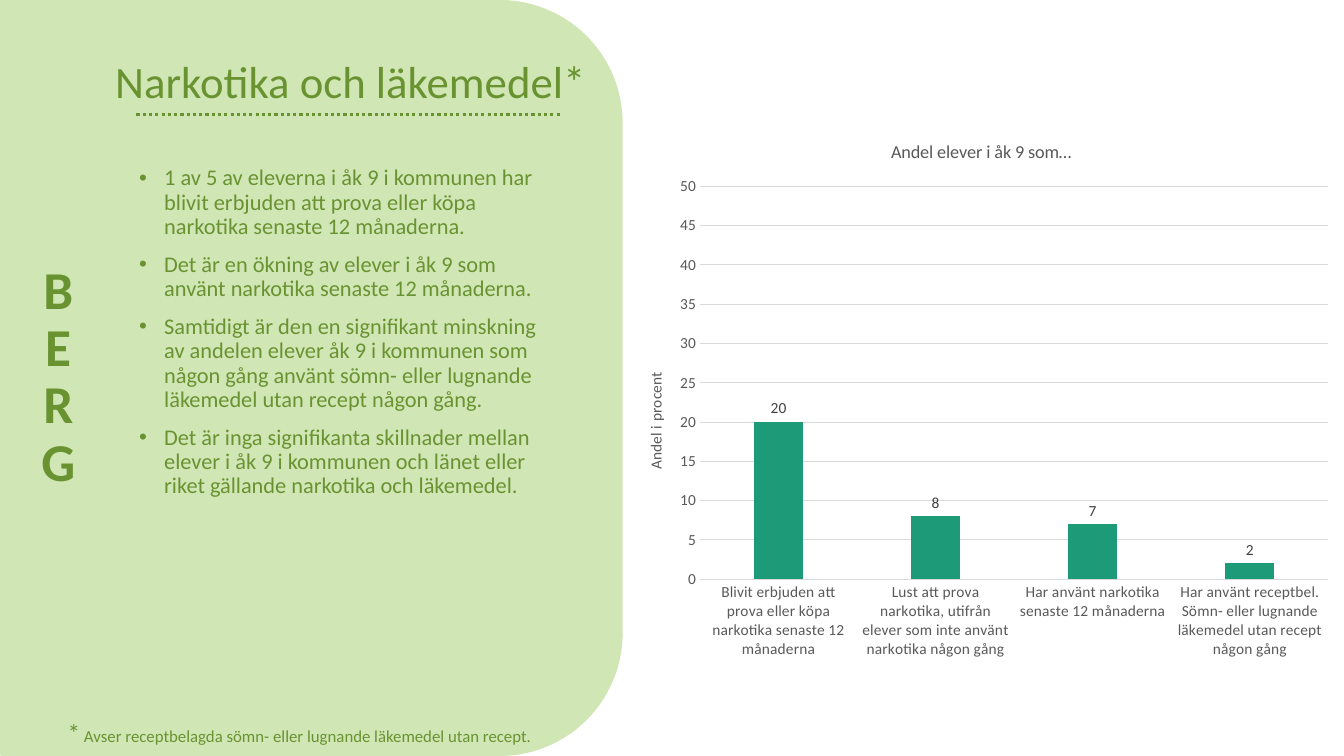
from lxml.etree import SubElement
from pptx import Presentation
from pptx.chart.data import CategoryChartData
from pptx.dml.color import RGBColor
from pptx.enum.chart import XL_CHART_TYPE as ChartType, XL_LABEL_POSITION as LabelPosition
from pptx.enum.chart import XL_TICK_MARK as TickMark
from pptx.enum.dml import MSO_LINE as Dash
from pptx.enum.shapes import MSO_CONNECTOR as Connector, MSO_SHAPE as Shape
from pptx.enum.text import MSO_ANCHOR as Anchor, PP_ALIGN as Align
from pptx.oxml.ns import qn
from pptx.util import Pt

PX = 9525  # EMU per px, 96 px to the inch
WIDTH, HEIGHT = 1280, 720
FONT = "Calibri"
PALE_GREEN = RGBColor(0xD1, 0xE6, 0xB5)
LEAF_GREEN = RGBColor(0x69, 0x93, 0x31)
BAR_GREEN = RGBColor(0x1D, 0x9A, 0x78)
GRID_GREY = RGBColor(0xD9, 0xD9, 0xD9)
AXIS_GREY = RGBColor(0x59, 0x59, 0x59)
LABEL_GREY = RGBColor(0x40, 0x40, 0x40)

FINDINGS = [
    "1 av 5 av eleverna i åk 9 i kommunen har blivit erbjuden att prova eller köpa "
    "narkotika senaste 12 månaderna.",
    "Det är en ökning av elever i åk 9 som använt narkotika senaste 12 månaderna.",
    "Samtidigt är den en signifikant minskning av andelen elever åk 9 i kommunen som "
    "någon gång använt sömn- eller lugnande läkemedel utan recept någon gång.",
    "Det är inga signifikanta skillnader mellan elever i åk 9 i kommunen och länet eller "
    "riket gällande narkotika och läkemedel.",
]
SHARES = {
    "Blivit erbjuden att prova eller köpa narkotika senaste 12 månaderna": 20,
    "Lust att prova narkotika, utifrån elever som inte använt narkotika någon gång": 8,
    "Har använt narkotika senaste 12 månaderna": 7,
    "Har använt receptbel. Sömn- eller lugnande läkemedel utan recept någon gång": 2,
}


def emu(*lengths):
    return [length * PX for length in lengths]


def set_font(font, size, color, bold=False):
    font.name, font.size, font.bold = FONT, Pt(size), bold
    font.color.rgb = color


def add_text(slide, box, paragraphs, align=Align.LEFT, anchor=Anchor.TOP, spacing=None,
             before=0, bold=False, bullet=False, vertical=None):
    """Each paragraph is a list of (text, size) runs."""
    shape = slide.shapes.add_textbox(*emu(*box))
    frame = shape.text_frame
    frame.word_wrap, frame.vertical_anchor = True, anchor
    if vertical:
        frame._txBody.bodyPr.set("vert", vertical)
    for index, runs in enumerate(paragraphs):
        paragraph = frame.paragraphs[0] if index == 0 else frame.add_paragraph()
        paragraph.alignment, paragraph.line_spacing = align, spacing
        paragraph.space_before = Pt(before)
        if bullet:
            properties = paragraph._p.get_or_add_pPr()
            properties.set("marL", str(24 * PX))
            properties.set("indent", str(-24 * PX))
            SubElement(properties, qn("a:buFont")).set("typeface", "Arial")
            SubElement(properties, qn("a:buChar")).set("char", "•")
        for text, size in runs:
            run = paragraph.add_run()
            run.text = text
            set_font(run.font, size, LEAF_GREEN, bold)
    return shape


def add_panel(slide, left, top, width, height):
    # Green panel, its left corners beyond the slide edge
    bleed = 109
    panel = slide.shapes.add_shape(
        Shape.ROUNDED_RECTANGLE, *emu(left - bleed, top, width + bleed, height))
    panel.shadow.inherit = False
    panel.fill.solid()
    panel.fill.fore_color.rgb = PALE_GREEN
    panel.line.fill.background()

    # Heading and dotted rule
    add_text(slide, (left + 55, top + 6, 558, 148), [[("Narkotika och läkemedel*", 32)]],
             align=Align.CENTER, anchor=Anchor.MIDDLE, spacing=0.9)
    rule = slide.shapes.add_connector(
        Connector.STRAIGHT, *emu(left + 130, top + 109, left + 533, top + 109))
    rule.line.color.rgb, rule.line.width = LEAF_GREEN, Pt(2.25)
    rule.line.dash_style = Dash.ROUND_DOT
    SubElement(rule._element.spPr, qn("a:effectLst"))

    # Findings, municipality name and footnote
    add_text(slide, (left + 123, top + 154, 410, 467), [[(text, 16)] for text in FINDINGS],
             spacing=0.9, before=10, bullet=True)
    add_text(slide, (left + 5, top + 6, 101, 708), [[("BERG", 38)]], align=Align.CENTER,
             anchor=Anchor.BOTTOM, spacing=0.9, bold=True, vertical="wordArtVert")
    note = " Avser receptbelagda sömn- eller lugnande läkemedel utan recept."
    add_text(slide, (left + 55, top + 678, 900, 38), [[("*", 18), (note, 12)]])


def set_layout(element, **fractions):
    """Fix the place of a chart part, in fractions of the chart."""
    layout = element.find(qn("c:layout"))
    if layout is None:
        layout = SubElement(element, qn("c:layout"))
        element.insert(0, layout)
    manual = SubElement(layout, qn("c:manualLayout"))
    if "w" in fractions:
        SubElement(manual, qn("c:layoutTarget")).set("val", "inner")
    for name in ("x", "y"):
        SubElement(manual, qn(f"c:{name}Mode")).set("val", "edge")
    for name, value in fractions.items():
        SubElement(manual, qn(f"c:{name}")).set("val", str(value))


def add_chart_title(owner, text, size, x, y):
    title = owner.chart_title if hasattr(owner, "chart_title") else owner.axis_title
    title.text_frame.text = text
    set_font(title.text_frame.paragraphs[0].runs[0].font, size, AXIS_GREY)
    set_layout(title._element, x=x, y=y)


def add_share_chart(slide, left, top, width, height):
    data = CategoryChartData(number_format="0")
    data.categories = SHARES.keys()
    data.add_series("Andel", SHARES.values())
    chart = slide.shapes.add_chart(
        ChartType.COLUMN_CLUSTERED, *emu(left, top, width, height), data).chart
    chart.has_legend = False
    set_font(chart.font, 11, AXIS_GREY)
    add_chart_title(chart, "Andel elever i åk 9 som…", 13, 0.37, 0.04)
    set_layout(chart._chartSpace.chart.plotArea, x=0.11, y=0.13, w=0.87, h=0.71)

    # Bars and their values
    plot = chart.plots[0]
    plot.gap_width, plot.overlap, plot.vary_by_categories = 219, -27, False
    bars = plot.series[0].format.fill
    bars.solid()
    bars.fore_color.rgb = BAR_GREEN
    plot.has_data_labels = True
    labels = plot.data_labels
    labels.show_value, labels.position = True, LabelPosition.OUTSIDE_END
    set_font(labels.font, 11, LABEL_GREY)

    # Axes
    category_axis, value_axis = chart.category_axis, chart.value_axis
    for axis in (category_axis, value_axis):
        axis.major_tick_mark = axis.minor_tick_mark = TickMark.NONE
        set_font(axis.tick_labels.font, 11, AXIS_GREY)
    value_axis.minimum_scale, value_axis.maximum_scale, value_axis.major_unit = 0, 50, 5
    value_axis.format.line.fill.background()
    for line in (category_axis.format.line, value_axis.major_gridlines.format.line):
        line.color.rgb, line.width = GRID_GREY, Pt(0.75)
    add_chart_title(value_axis, "Andel i procent", 11, 0.03, 0.46)


def main():
    presentation = Presentation()
    presentation.slide_width, presentation.slide_height = emu(WIDTH, HEIGHT)
    slide = presentation.slides.add_slide(presentation.slide_layouts[6])
    add_panel(slide, 0, 0, 593, HEIGHT)
    add_share_chart(slide, 591, 109, 688, 527)
    presentation.save("out.pptx")


if __name__ == "__main__":
    main()
